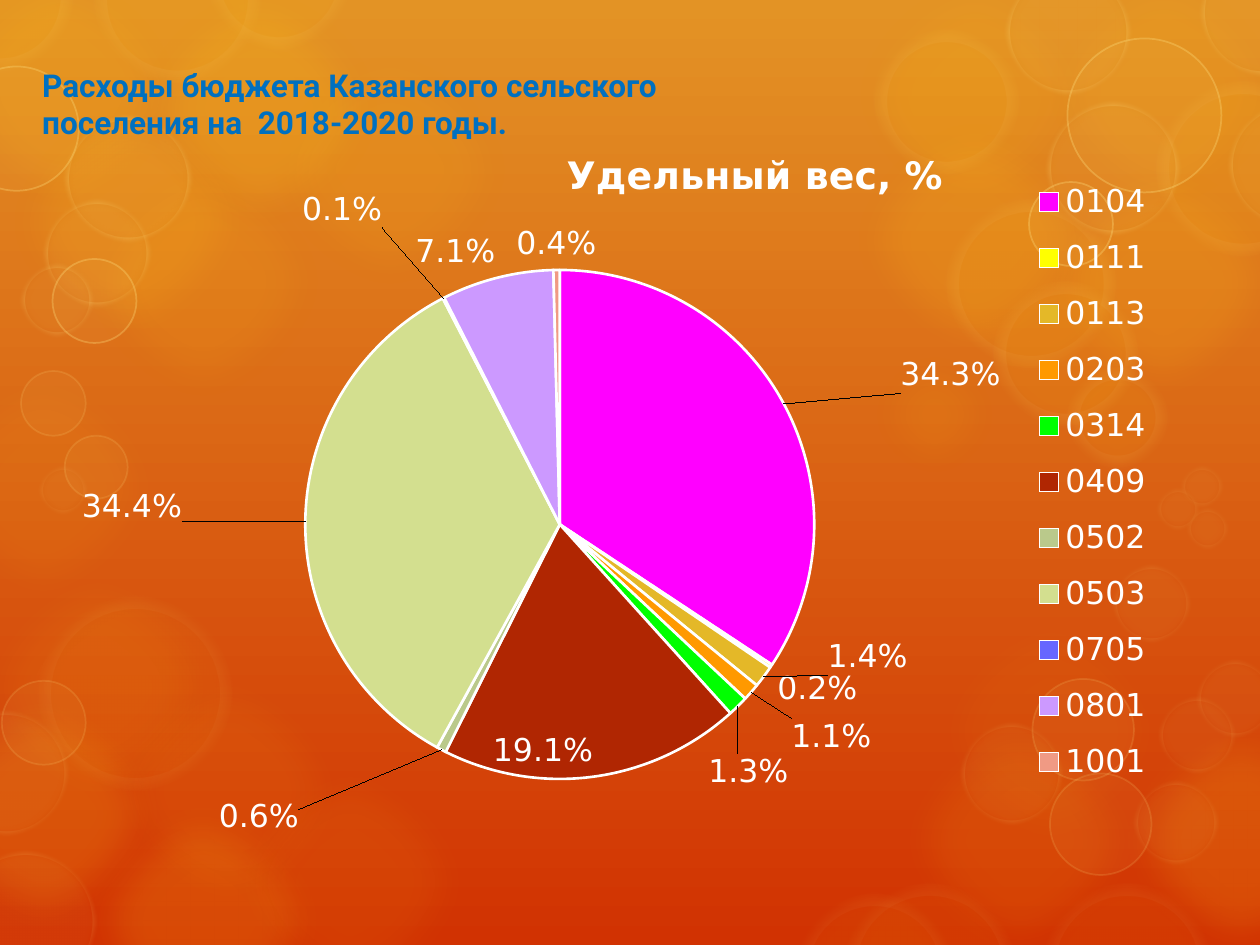
from lxml import etree
from pptx import Presentation
from pptx.chart.data import CategoryChartData
from pptx.dml.color import RGBColor
from pptx.enum.chart import XL_CHART_TYPE, XL_LABEL_POSITION, XL_LEGEND_POSITION
from pptx.enum.shapes import MSO_SHAPE
from pptx.oxml.ns import qn
from pptx.util import Pt

PIE = XL_CHART_TYPE.PIE
LEGEND_RIGHT = XL_LEGEND_POSITION.RIGHT
OUTSIDE = XL_LABEL_POSITION.OUTSIDE_END
INSIDE = XL_LABEL_POSITION.INSIDE_END
ELLIPSE = MSO_SHAPE.OVAL

COLORS = {
    "top": "E39325", "bottom": "D13202", "gold": "FDC61B", "pale": "FFE281",
    "haze": "FEEBAE", "white": "FFFFFF", "title": "0070C0",
}
CHART_FONT = "DejaVu Sans"
PERCENT = "0.0%"

# Glows: left, top, diameter, opacity
GLOWS = [
    (-19, 318, 150, 8), (41, 86, 150, 10), (148, 22, 150, 10), (41, 451, 150, 16),
    (-40, -23, 150, 14), (73, -13, 150, 20), (0, 52, 150, 15), (590, -23, 150, 10),
    (482, -21, 150, 10), (590, 86, 150, 15), (634, 405, 150, 16), (525, 343, 150, 5),
    (-50, 390, 150, 16), (55, 377, 150, 8), (482, 62, 150, 15), (508, 405, 150, 10),
    (125, 429, 150, 8), (-50, 203, 150, 8), (486, 189, 96, 10),
]
# Rings: (line colour, fill colour, fill opacity, line width, line opacity, blur), circles
RINGS = [
    (("haze", "gold", 10, 14, 6, 8), [
        (661, 47, 99), (500, 17, 82), (541, 114, 96), (568, 161, 82), (610, 210, 57),
        (54, -47, 94), (118, -54, 82), (-41, -42, 82)]),
    (("haze", "gold", 6, 14, 4, 8), [
        (22, 341, 110), (455, 511, 90), (482, 505, 98), (596, 505, 96)]),
    (("pale", "pale", 5, 5, 15, 4), [
        (-26, 486, 81), (-32, 406, 71), (549, 413, 58), (648, 446, 48), (636, 323, 44),
        (662, 398, 44), (684, 377, 44), (675, 266, 24), (661, 279, 24), (678, 290, 24),
        (22, 266, 28)]),
    (("pale", "pale", 5, 5, 30, 4), [
        (37, 66, 72), (25, 114, 61), (12, 151, 41), (575, -17, 71), (686, -28, 71),
        (702, 59, 71), (598, 58, 76)]),
    (("pale", "pale", 5, 1, 15, 0), [
        (1, 389, 48), (600, 442, 58), (590, 388, 58), (12, 212, 37), (37, 249, 36)]),
    (("pale", "pale", 5, 1, 30, 0), [
        (-26, 38, 71), (30, 148, 48), (610, 22, 88), (588, 104, 48)]),
]
# Budget section, share, slice colour, label shift as a fraction of the chart
SECTIONS = [
    ("0104", 0.343, "FF00FF", (0.095, -0.01)),
    ("0111", 0.002, "FFFF00", None),
    ("0113", 0.014, "E4B828", (0.05, -0.06)),
    ("0203", 0.011, "FF9900", (0.03, 0.03)),
    ("0314", 0.013, "00FF00", (-0.03, 0.06)),
    ("0409", 0.191, "B02602", None),
    ("0502", 0.006, "BAC98B", (-0.12, 0.075)),
    ("0503", 0.344, "D3DF8F", (-0.1, -0.02)),
    ("0705", 0.001, "6666FF", (-0.05, -0.09)),
    ("0801", 0.071, "CC99FF", None),
    ("1001", 0.004, "F09A84", None),
]


def rgb(name):
    return RGBColor.from_string(COLORS[name])


def set_opacity(element, percent):
    for color in element.iter(qn("a:srgbClr")):
        etree.SubElement(color, qn("a:alpha"), val=str(percent * 1000))


def add_circle(slide, box, circle, style):
    left, top, diameter = circle
    line_color, fill_color, fill_opacity, line_width, line_opacity, blur = style
    shape = slide.shapes.add_shape(
        ELLIPSE, Pt(box[0] + left), Pt(box[1] + top), Pt(diameter), Pt(diameter))
    shape.shadow.inherit = False
    shape.fill.solid()
    shape.fill.fore_color.rgb = rgb(fill_color)
    properties = shape.element.spPr
    set_opacity(properties, fill_opacity)
    if line_width:
        shape.line.width = Pt(line_width)
        shape.line.color.rgb = rgb(line_color)
        set_opacity(properties.find(qn("a:ln")), line_opacity)
    else:
        shape.line.fill.background()
    if blur:
        effects = properties.find(qn("a:effectLst"))
        etree.SubElement(effects, qn("a:softEdge"), rad=str(Pt(blur)))


def add_backdrop(slide, box):
    fill = slide.background.fill
    fill.gradient()
    fill.gradient_angle = 270
    for stop, name in zip(fill.gradient_stops, ("top", "bottom")):
        stop.color.rgb = rgb(name)
    for *circle, opacity in GLOWS:
        add_circle(slide, box, circle, (None, "gold", opacity, 0, 0, 20))
    for style, circles in RINGS:
        for circle in circles:
            add_circle(slide, box, circle, style)


def make_layout(inner=False, **fractions):
    """Return a c:layout element; fractions are x, y, w and h of the chart."""
    layout = etree.Element(qn("c:layout"))
    manual = etree.SubElement(layout, qn("c:manualLayout"))
    if inner:
        etree.SubElement(manual, qn("c:layoutTarget"), val="inner")
    if "w" in fractions:
        for mode in ("xMode", "yMode"):
            etree.SubElement(manual, qn("c:" + mode), val="edge")
    for key, value in fractions.items():
        etree.SubElement(manual, qn("c:" + key), val=str(value))
    return layout


def replace_layout(parent, layout, previous=None):
    for old in parent.findall(qn("c:layout")):
        parent.remove(old)
    if previous is None:
        parent.insert(0, layout)
    else:
        parent.find(qn(previous)).addnext(layout)


def style_font(font, size, bold=False):
    font.name, font.size, font.bold = CHART_FONT, Pt(size), bold
    font.color.rgb = rgb("white")


def style_slice(series, index, color, shift):
    point = series.points[index]
    point.format.fill.solid()
    point.format.fill.fore_color.rgb = RGBColor.from_string(color)
    point.format.line.color.rgb = rgb("white")
    point.format.line.width = Pt(1.5)
    label = point.data_label
    style_font(label.font, 18)
    label.position = INSIDE if SECTIONS[index][0] == "0409" else OUTSIDE
    element = series.data_labels._element.findall(qn("c:dLbl"))[index]
    number_format = etree.Element(qn("c:numFmt"), formatCode=PERCENT, sourceLinked="0")
    element.insert(1, number_format)
    if shift:
        element.insert(1, make_layout(x=shift[0], y=shift[1]))


def add_share_chart(slide, box):
    data = CategoryChartData(number_format=PERCENT)
    data.categories = [section[0] for section in SECTIONS]
    data.add_series("Удельный вес, %", [section[1] for section in SECTIONS])
    chart = slide.shapes.add_chart(PIE, *map(Pt, box), data).chart
    style_font(chart.font, 18)
    chart.has_title = True
    run = chart.chart_title.text_frame.paragraphs[0].add_run()
    run.text = "Удельный вес, %"
    style_font(run.font, 21.6, bold=True)
    title_layout = make_layout(x=0.45, y=0.02, w=0.33, h=0.06)
    replace_layout(chart.chart_title._element, title_layout, "c:tx")
    chart.has_legend = True
    chart.legend.position = LEGEND_RIGHT
    chart.legend.include_in_layout = False
    style_font(chart.legend.font, 18)
    legend_layout = make_layout(x=0.85, y=0.05, w=0.12, h=0.9)
    replace_layout(chart.legend._element, legend_layout, "c:legendPos")

    plot = chart.plots[0]
    plot.vary_by_categories = True
    plot_area = plot._element.getparent()
    replace_layout(plot_area, make_layout(True, x=0.23, y=0.2, w=0.44, h=0.72))
    series = plot.series[0]
    labels = series.data_labels
    labels.show_value = True
    labels.number_format = PERCENT
    labels.number_format_is_linked = False
    style_font(labels.font, 18)
    for index, (_, _, color, shift) in enumerate(SECTIONS):
        style_slice(series, index, color, shift)


def add_heading(slide, box):
    frame = slide.shapes.add_textbox(*map(Pt, box)).text_frame
    frame.word_wrap = True
    run = frame.paragraphs[0].add_run()
    run.text = "Расходы бюджета Казанского сельского поселения на  2018-2020 годы."
    run.font.name, run.font.size, run.font.bold = "Roboto", Pt(18), True
    run.font.color.rgb = rgb("title")


def main():
    presentation = Presentation()
    presentation.slide_width, presentation.slide_height = Pt(720), Pt(540)
    slide = presentation.slides.add_slide(presentation.slide_layouts[6])
    add_backdrop(slide, (0, 0, 720, 540))
    add_share_chart(slide, (22, 73.5, 662, 404))
    add_heading(slide, (17, 34, 422, 51))
    presentation.save("out.pptx")


if __name__ == "__main__":
    main()
